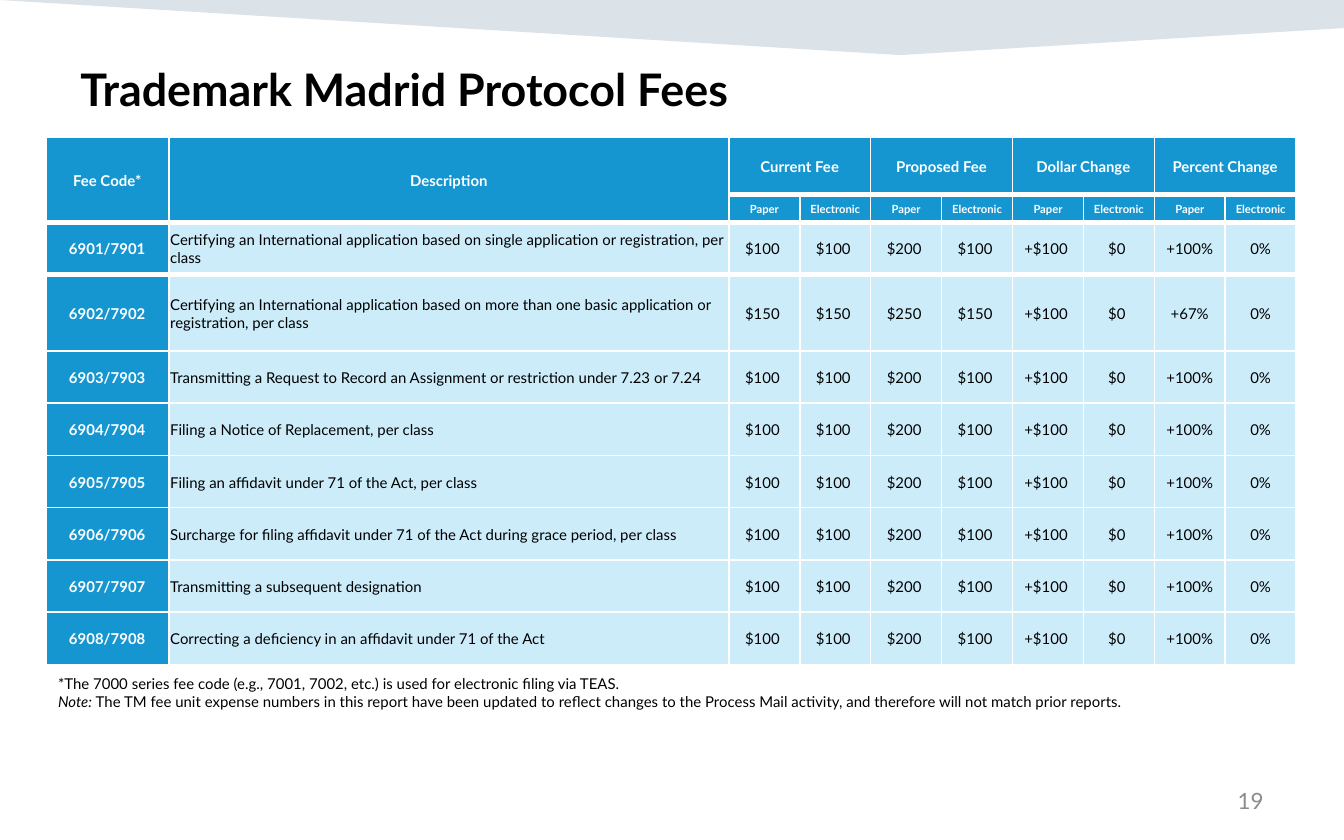
from lxml import etree
from pptx import Presentation
from pptx.dml.color import RGBColor
from pptx.enum import text
from pptx.oxml import ns
from pptx.util import Pt

FONT = "Lato"
BLACK, WHITE, GREY = "000000", "FFFFFF", "8C8C8C"
BLUE, PALE, NAVY = "1596D1", "CCECFA", "164469"
LEFT, CENTER, RIGHT = text.PP_ALIGN.LEFT, text.PP_ALIGN.CENTER, text.PP_ALIGN.RIGHT

COL_WIDTHS = [66, 300] + [38] * 8
ROW_HEIGHTS = [30.7, 15, 28, 41] + [28] * 6
GROUPS = ["Current Fee", "Proposed Fee", "Dollar Change", "Percent Change"]
FEES = [
    ("Certifying an International application based on single application or registration, per class", 100),
    ("Certifying an International application based on more than one basic application or registration, per class", 150),
    ("Transmitting a Request to Record an Assignment or restriction under 7.23 or 7.24", 100),
    ("Filing a Notice of Replacement, per class", 100),
    ("Filing an affidavit under 71 of the Act, per class", 100),
    ("Surcharge for filing affidavit under 71 of the Act during grace period, per class", 100),
    ("Transmitting a subsequent designation", 100),
    ("Correcting a deficiency in an affidavit under 71 of the Act", 100),
]
PAPER_RISE = 100
FOOTNOTES = [
    [("*The 7000 series fee code (e.g., 7001, 7002, etc.) is used for electronic filing via TEAS.", False)],
    [("Note: ", True),
     ("The TM fee unit expense numbers in this report have been updated to reflect changes to the "
      "Process Mail activity, and therefore will not match prior reports.", False)],
]


def rgb(value):
    """Return the colour for a hex string."""
    return RGBColor.from_string(value)


def style(p, size, color, bold=False, align=LEFT):
    """Format a paragraph and all of its runs."""
    p.alignment = align
    for r in p.runs:
        r.font.name, r.font.size, r.font.bold = FONT, Pt(size), bold
        r.font.color.rgb = rgb(color)


def add_text(slide, box, lines, size, color, bold=False, align=LEFT, anchor=text.MSO_ANCHOR.TOP):
    """Add a wrapped text box from lines of (text, italic) runs."""
    tf = slide.shapes.add_textbox(*map(Pt, box)).text_frame
    tf.word_wrap = True
    tf.vertical_anchor = anchor
    for i, line in enumerate(lines):
        p = tf.paragraphs[0] if i == 0 else tf.add_paragraph()
        for words, italic in line:
            r = p.add_run()
            r.text, r.font.italic = words, italic
        style(p, size, color, bold, align)


def add_banner(slide, box):
    """Draw the translucent angled band inside the box."""
    x, y, w, h = box
    points = [(x, y), (x + w, y), (x + w, y + 0.51 * h), (x + 0.67 * w, y + h)]
    points = [(Pt(px), Pt(py)) for px, py in points]
    builder = slide.shapes.build_freeform(*points[0])
    builder.add_line_segments(points[1:], close=True)
    sp = builder.convert_to_shape()
    sp.shadow.inherit = False
    sp.line.fill.background()
    sp.fill.solid()
    sp.fill.fore_color.rgb = rgb(NAVY)
    color = sp.fill._xPr.find(".//" + ns.qn("a:srgbClr"))
    etree.SubElement(color, ns.qn("a:alpha"), val="15000")


def set_borders(cell, top, bottom):
    """Give a cell white borders, with the top and bottom widths in points."""
    tc_pr = cell._tc.get_or_add_tcPr()
    for side, width in zip("LRTB", (1, 1, top, bottom)):
        ln = etree.SubElement(tc_pr, ns.qn("a:ln" + side), w=str(Pt(width)))
        fill = etree.SubElement(ln, ns.qn("a:solidFill"))
        etree.SubElement(fill, ns.qn("a:srgbClr"), val=WHITE)


def fill_cell(cell, words, size, header, align=CENTER):
    """Write and colour one table cell."""
    cell.fill.solid()
    cell.fill.fore_color.rgb = rgb(BLUE if header else PALE)
    cell.margin_left = cell.margin_right = cell.margin_top = Pt(0.7)
    cell.margin_bottom = 0
    cell.vertical_anchor = text.MSO_ANCHOR.MIDDLE
    cell.text_frame.text = words
    style(cell.text_frame.paragraphs[0], size, WHITE if header else BLACK, header, align)


def fee_row(number, description, fee):
    """Return the ten cell texts for one fee."""
    dollars = [f"${value} " for value in (fee, fee, fee + PAPER_RISE, fee)]
    changes = [f"+${PAPER_RISE} ", "$0 ", f"+{PAPER_RISE / fee:.0%}", "0%"]
    return [f"{6900 + number}/{7900 + number}", description] + dollars + changes


def add_fee_table(slide, box):
    """Build the fee table with its two header rows."""
    table = slide.shapes.add_table(len(ROW_HEIGHTS), len(COL_WIDTHS), *map(Pt, box)).table
    table.first_row = table.horz_banding = False
    for column, width in zip(table.columns, COL_WIDTHS):
        column.width = Pt(width)
    for row, height in zip(table.rows, ROW_HEIGHTS):
        row.height = Pt(height)
    rules = [1, 3, 3, 3] + [1] * (len(ROW_HEIGHTS) - 3)
    for i, row in enumerate(table.rows):
        for cell in row.cells:
            set_borders(cell, rules[i], rules[i + 1])
    for col, title in enumerate(["Fee Code*", "Description"]):
        table.cell(0, col).merge(table.cell(1, col))
        fill_cell(table.cell(0, col), title, 8, True)
    for col, title in zip(range(2, len(COL_WIDTHS), 2), GROUPS):
        table.cell(0, col).merge(table.cell(0, col + 1))
        fill_cell(table.cell(0, col), title, 8, True)
        for offset, kind in enumerate(["Paper", "Electronic"]):
            fill_cell(table.cell(1, col + offset), kind, 6, True)
    for number, (description, fee) in enumerate(FEES, 1):
        for col, words in enumerate(fee_row(number, description, fee)):
            fill_cell(table.cell(number + 1, col), words, 8, col == 0, LEFT if col == 1 else CENTER)


def add_fee_slide(prs):
    """Lay out the fee slide."""
    slide = prs.slides.add_slide(prs.slide_layouts[6])
    add_banner(slide, (0, 0, 720, 29.5))
    add_text(slide, (36, 29.5, 648, 70), [[("Trademark Madrid Protocol Fees", False)]], 24, BLACK, True)
    add_fee_table(slide, (24.5, 73.4, sum(COL_WIDTHS), sum(ROW_HEIGHTS)))
    add_text(slide, (516, 417, 168, 24), [[("19", False)]], 12, GREY,
             align=RIGHT, anchor=text.MSO_ANCHOR.MIDDLE)
    add_text(slide, (24, 358, 641, 26.5), FOOTNOTES, 8, BLACK)


def main():
    """Create and save the presentation."""
    prs = Presentation()
    prs.slide_width, prs.slide_height = Pt(720), Pt(450)
    add_fee_slide(prs)
    prs.save("out.pptx")


if __name__ == "__main__":
    main()
